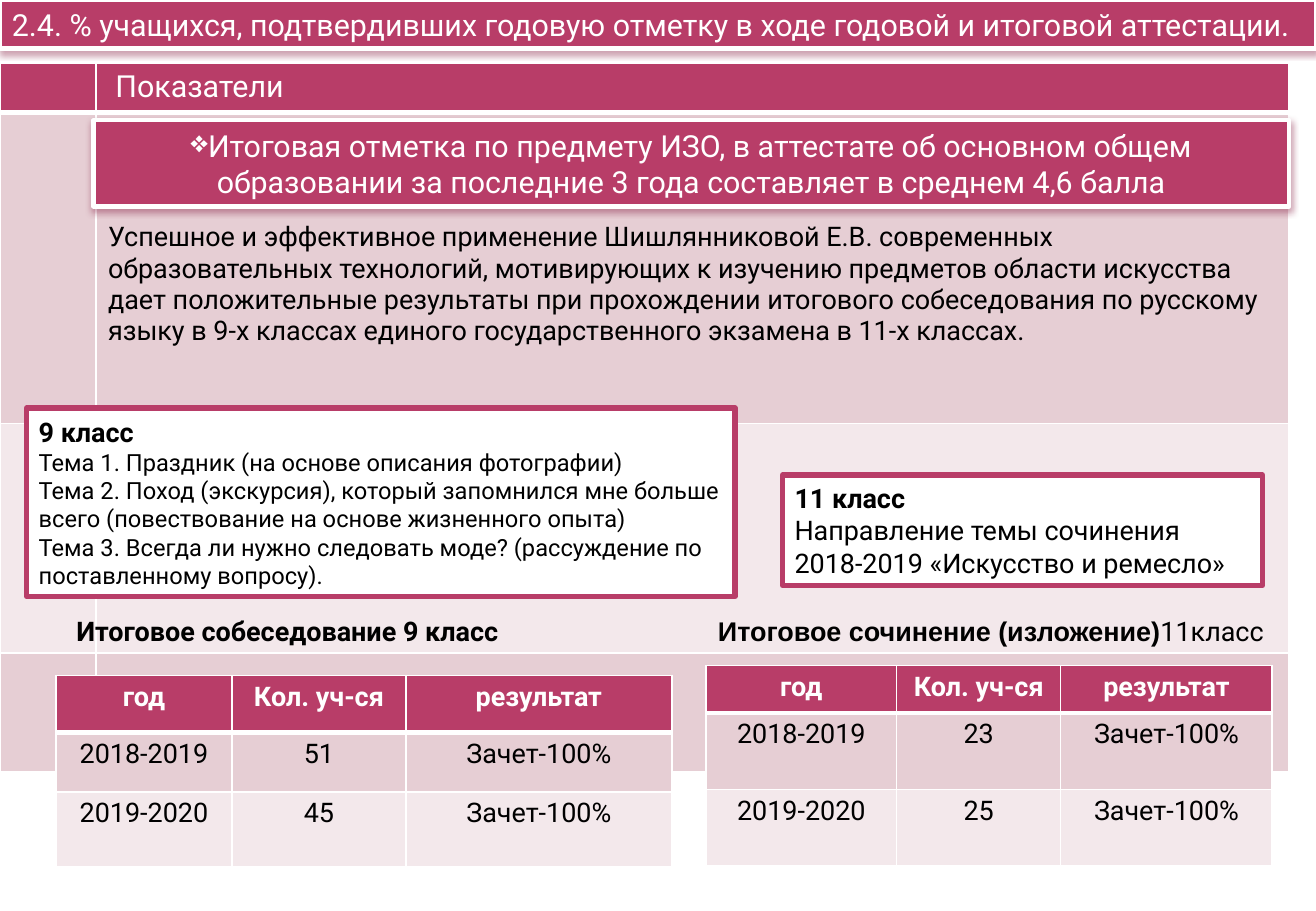
from pptx import Presentation
from pptx.dml.color import RGBColor
from pptx.enum.shapes import MSO_SHAPE as Shape
from pptx.enum.text import MSO_ANCHOR as Anchor, PP_ALIGN as Align
from pptx.oxml import parse_xml
from pptx.oxml.ns import nsdecls
from pptx.util import Inches, Pt

WIDTH, HEIGHT = 10.83, 7.5
FONT = "Roboto"
COLORS = {"berry": "B83D68", "rose": "E6CED4", "blush": "F3E8EB",
          "white": "FFFFFF", "black": "000000", "shade": "7F1238"}

TITLE = "2.4. % учащихся, подтвердивших годовую отметку в ходе годовой и итоговой аттестации."
SUMMARY = ("Итоговая отметка по предмету ИЗО, в аттестате об основном общем "
           "образовании за последние 3 года составляет в среднем 4,6 балла")
INDICATORS = "Показатели"
RESULTS = ("Успешное и эффективное применение Шишлянниковой Е.В. современных "
           "образовательных технологий, мотивирующих к изучению предметов области искусства "
           "дает положительные результаты при прохождении итогового собеседования по русскому "
           "языку в 9-х классах единого государственного экзамена в 11-х классах.")
BANNERS = [
    ((0, 0, WIDTH, 0.4), TITLE, None),
    ((0.77, 0.99, 9.84, 0.71), SUMMARY, "❖"),
]
TOPICS = [
    ((0.22, 3.36, 5.83, 1.55), 14, "9 класс", [
        "Тема 1. Праздник (на основе описания фотографии)",
        "Тема 2. Поход (экскурсия), который запомнился мне больше всего "
        "(повествование на основе жизненного опыта)",
        "Тема 3. Всегда ли нужно следовать моде? (рассуждение по поставленному вопросу).",
    ]),
    ((6.44, 3.91, 3.95, 0.91), 16, "11 класс", [
        "Направление темы сочинения 2018-2019 «Искусство и ремесло»",
    ]),
]
CAPTIONS = [
    ((0.53, 5.01, 4.25, 0.37), [("Итоговое собеседование 9 класс", FONT, True)]),
    ((5.81, 5.01, 4.79, 0.37), [("Итоговое сочинение (изложение)", "Arial", True),
                                ("11класс", FONT, False)]),
]
FRAME = ((0, 0.52), [0.79, 9.82], [0.39, 2.56, 1.89, 0.98])
HEADINGS = ["год", "Кол. уч-ся", "результат"]
YEARS = ["2018-2019", "2019-2020"]
OUTCOME = "Зачет-100%"
SCORES = [
    ((0.46, 5.56), [1.45, 1.43, 2.19], [0.47, 0.49, 0.62], ["51", "45"]),
    ((5.81, 5.48), [1.57, 1.35, 1.74], [0.39, 0.63, 0.63], ["23", "25"]),
]


def color(name):
    return RGBColor.from_string(COLORS[name])


def write(para, text, size, ink="black", bold=False, font=FONT):
    span = para.add_run()
    span.text = text
    span.font.size = Pt(size)
    span.font.name = font
    span.font.bold = bold
    span.font.color.rgb = color(ink)


def add_box(page, place, fill, line, weight):
    box = page.shapes.add_shape(Shape.RECTANGLE, *map(Inches, place))
    box.shadow.inherit = False
    box.fill.solid()
    box.fill.fore_color.rgb = color(fill)
    box.line.color.rgb = color(line)
    box.line.width = Pt(weight)
    box.text_frame.word_wrap = True
    box.text_frame.vertical_anchor = Anchor.MIDDLE
    return box


def add_shadow(box):
    effects = box._element.spPr.find("{*}effectLst")
    effects.append(parse_xml(
        f'<a:outerShdw {nsdecls("a")} blurRad="{Pt(4)}" dist="{Pt(2)}" dir="5400000" '
        f'rotWithShape="0"><a:srgbClr val="{COLORS["shade"]}">'
        '<a:alpha val="38000"/></a:srgbClr></a:outerShdw>'))


def add_banner(page, place, text, bullet):
    box = add_box(page, place, "berry", "white", 2.5)
    add_shadow(box)
    para = box.text_frame.paragraphs[0]
    para.alignment = Align.CENTER if bullet else Align.LEFT
    if bullet:
        props = para._p.get_or_add_pPr()
        props.set("marL", "0")
        props.set("indent", "0")
        props.append(parse_xml(f'<a:buChar {nsdecls("a")} char="{bullet}"/>'))
    write(para, text, 18, "white")


def add_topics(page, place, size, heading, lines):
    frame = add_box(page, place, "white", "berry", 3.15).text_frame
    write(frame.paragraphs[0], heading, 16, bold=True)
    for line in lines:
        write(frame.add_paragraph(), line, size)
    for para in frame.paragraphs:
        para.alignment = Align.LEFT


def add_caption(page, place, spans):
    frame = page.shapes.add_textbox(*map(Inches, place)).text_frame
    frame.word_wrap = True
    for text, font, bold in spans:
        write(frame.paragraphs[0], text, 16, bold=bold, font=font)


def style_cell(cell, row):
    props = cell._tc.get_or_add_tcPr()
    for side in "LRTB":
        weight = 3 if (row, side) in ((0, "B"), (1, "T")) else 1
        props.append(parse_xml(
            f'<a:ln{side} {nsdecls("a")} w="{Pt(weight)}"><a:solidFill>'
            f'<a:srgbClr val="{COLORS["white"]}"/></a:solidFill></a:ln{side}>'))
    cell.fill.solid()
    cell.fill.fore_color.rgb = color("berry" if row == 0 else ("blush", "rose")[row % 2])


def add_grid(page, corner, widths, heights):
    place = (*corner, sum(widths), sum(heights))
    grid = page.shapes.add_table(len(heights), len(widths), *map(Inches, place)).table
    for column, width in zip(grid.columns, widths):
        column.width = Inches(width)
    for index, (row, height) in enumerate(zip(grid.rows, heights)):
        row.height = Inches(height)
        for cell in row.cells:
            style_cell(cell, index)
    return grid


def add_frame(page):
    grid = add_grid(page, *FRAME)
    header, body = grid.cell(0, 1), grid.cell(1, 1)
    header.margin_left = Inches(0.16)
    write(header.text_frame.paragraphs[0], INDICATORS, 18, "white")
    body.margin_top = Inches(0.9)
    write(body.text_frame.paragraphs[0], RESULTS, 16)


def add_scores(page, corner, widths, heights, counts):
    grid = add_grid(page, corner, widths, heights)
    rows = [HEADINGS] + [[year, count, OUTCOME] for year, count in zip(YEARS, counts)]
    for r, row in enumerate(rows):
        for c, text in enumerate(row):
            para = grid.cell(r, c).text_frame.paragraphs[0]
            para.alignment = Align.CENTER
            write(para, text, 16, "black" if r else "white", bold=r == 0)


def main():
    deck = Presentation()
    deck.slide_width, deck.slide_height = Inches(WIDTH), Inches(HEIGHT)
    page = deck.slides.add_slide(deck.slide_layouts[6])
    add_frame(page)
    for banner in BANNERS:
        add_banner(page, *banner)
    for topics in TOPICS:
        add_topics(page, *topics)
    for scores in SCORES:
        add_scores(page, *scores)
    for caption in CAPTIONS:
        add_caption(page, *caption)
    deck.save("out.pptx")


if __name__ == "__main__":
    main()
